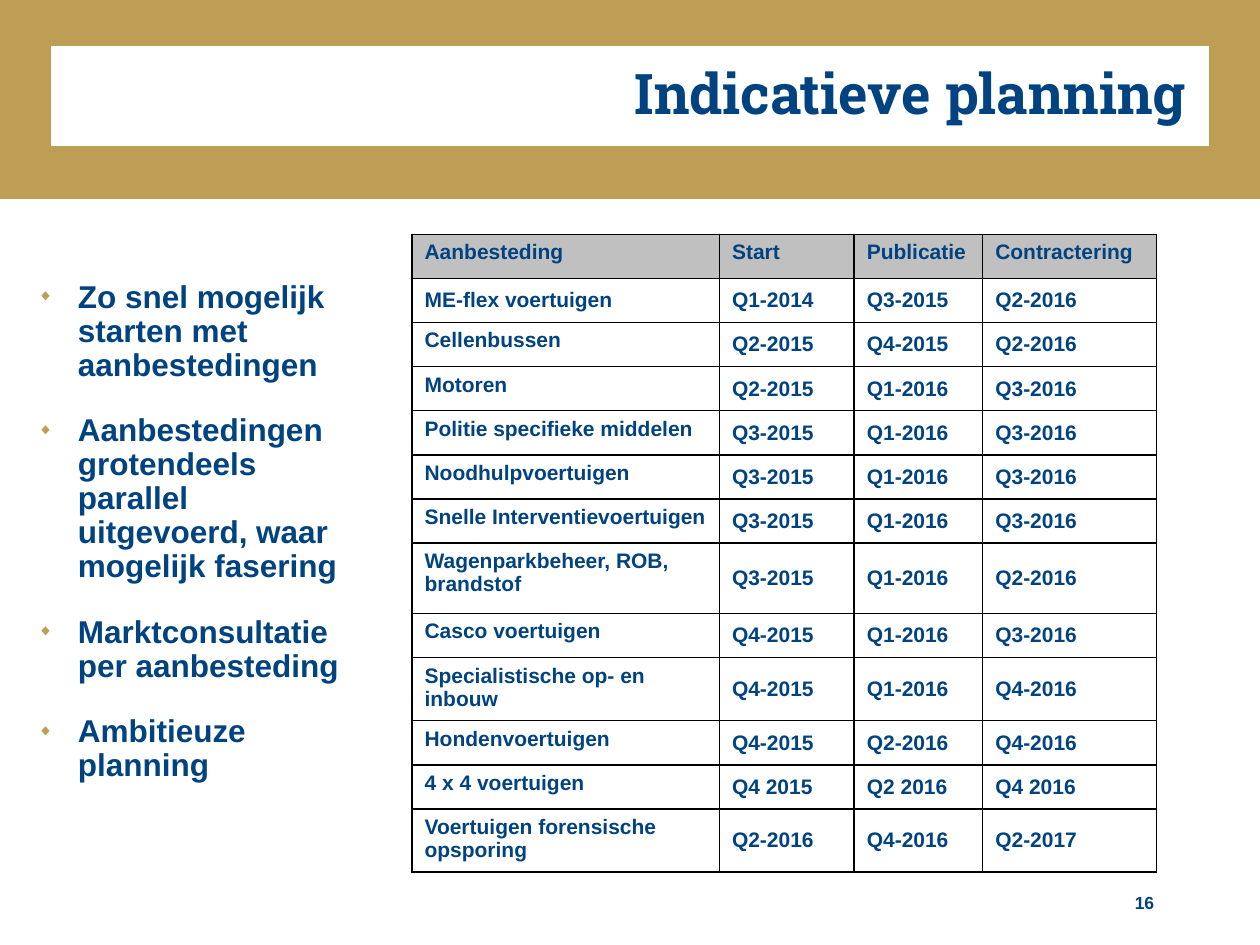
from dataclasses import dataclass

from lxml import etree
from pptx import Presentation
from pptx.dml.color import RGBColor
from pptx.enum.text import MSO_ANCHOR, MSO_AUTO_SIZE, PP_ALIGN
from pptx.oxml.ns import qn
from pptx.util import Inches, Pt

LEFT, RIGHT, JUSTIFY = PP_ALIGN.LEFT, PP_ALIGN.RIGHT, PP_ALIGN.JUSTIFY
TOP, MIDDLE = MSO_ANCHOR.TOP, MSO_ANCHOR.MIDDLE
NO_AUTOFIT = MSO_AUTO_SIZE.NONE


@dataclass(frozen=True)
class Theme:
    """Colours, fonts and type sizes of the slide."""
    navy: str = "004380"
    gold: str = "BE9E55"
    white: str = "FFFFFF"
    grey: str = "C0C0C0"
    black: str = "000000"
    heading_font: str = "Roboto Slab"
    body_font: str = "Arial"
    title_size: int = 32
    body_size: int = 18
    table_size: int = 12
    number_size: int = 10


THEME = Theme()

TITLE = "Indicatieve planning"
PAGE_NUMBER = "16"
POINTS = [
    "Zo snel mogelijk starten met aanbestedingen",
    "Aanbestedingen grotendeels parallel uitgevoerd, waar mogelijk fasering",
    "Marktconsultatie per aanbesteding",
    "Ambitieuze planning",
]
PLANNING = [
    ("Aanbesteding", "Start", "Publicatie", "Contractering"),
    ("ME-flex voertuigen", "Q1-2014", "Q3-2015", "Q2-2016"),
    ("Cellenbussen", "Q2-2015", "Q4-2015", "Q2-2016"),
    ("Motoren", "Q2-2015", "Q1-2016", "Q3-2016"),
    ("Politie specifieke middelen", "Q3-2015", "Q1-2016", "Q3-2016"),
    ("Noodhulpvoertuigen", "Q3-2015", "Q1-2016", "Q3-2016"),
    ("Snelle Interventievoertuigen", "Q3-2015", "Q1-2016", "Q3-2016"),
    ("Wagenparkbeheer, ROB, brandstof", "Q3-2015", "Q1-2016", "Q2-2016"),
    ("Casco voertuigen", "Q4-2015", "Q1-2016", "Q3-2016"),
    ("Specialistische op- en inbouw", "Q4-2015", "Q1-2016", "Q4-2016"),
    ("Hondenvoertuigen", "Q4-2015", "Q2-2016", "Q4-2016"),
    ("4 x 4 voertuigen", "Q4 2015", "Q2 2016", "Q4 2016"),
    ("Voertuigen forensische opsporing", "Q2-2016", "Q4-2016", "Q2-2017"),
]
COLUMN_WIDTHS = (2.44, 1.07, 1.02, 1.38)
COLUMN_ALIGNMENTS = (LEFT, JUSTIFY, LEFT, JUSTIFY)
ROW_HEIGHT = 0.35
TALL_ROW, TALL_ROW_HEIGHT = 7, 0.56


def rgb(colour):
    """Turn a hex string into a colour."""
    return RGBColor.from_string(colour)


def write_text(frame, *texts, size, font=THEME.body_font, align=LEFT,
               line_spacing=None, space_before=None):
    """Write one bold navy paragraph per text and return the paragraphs."""
    frame.word_wrap = True
    paragraphs = [frame.paragraphs[0]] + [frame.add_paragraph() for _ in texts[1:]]
    for paragraph, text in zip(paragraphs, texts):
        paragraph.alignment = align
        paragraph.line_spacing = line_spacing
        paragraph.space_before = space_before
        run = paragraph.add_run()
        run.text = text
        run.font.name = font
        run.font.size = Pt(size)
        run.font.bold = True
        run.font.color.rgb = rgb(THEME.navy)
    return paragraphs


def set_insets(frame, horizontal, vertical):
    """Set equal side insets and equal top and bottom insets."""
    frame.margin_left = frame.margin_right = Inches(horizontal)
    frame.margin_top = frame.margin_bottom = Inches(vertical)


def add_bullet(paragraph):
    """Give a paragraph a hanging half-size gold diamond."""
    properties = paragraph._p.get_or_add_pPr()
    indent = Inches(0.32)
    properties.set("marL", str(indent))
    properties.set("indent", str(-indent))
    colour = etree.SubElement(properties, qn("a:buClr"))
    etree.SubElement(colour, qn("a:srgbClr"), val=THEME.gold)
    etree.SubElement(properties, qn("a:buSzPct"), val="50000")
    etree.SubElement(properties, qn("a:buFont"), typeface=THEME.body_font)
    etree.SubElement(properties, qn("a:buChar"), char="◆")


def add_borders(cell):
    """Draw a thin black line on each side of a cell."""
    properties = cell._tc.get_or_add_tcPr()
    for side in ("a:lnL", "a:lnR", "a:lnT", "a:lnB"):
        border = etree.SubElement(properties, qn(side), w=str(Pt(1)))
        fill = etree.SubElement(border, qn("a:solidFill"))
        etree.SubElement(fill, qn("a:srgbClr"), val=THEME.black)


def format_title(title):
    """Place the title in a white panel with a broad gold frame."""
    title.left, title.top = Inches(0.2), Inches(0.16)
    title.width, title.height = Inches(9.6), Inches(1.21)
    title.fill.solid()
    title.fill.fore_color.rgb = rgb(THEME.white)
    title.line.color.rgb = rgb(THEME.gold)
    title.line.width = Pt(30)
    etree.SubElement(title.line._get_or_add_ln(), qn("a:miter"), lim="800000")
    frame = title.text_frame
    frame.auto_size = NO_AUTOFIT
    frame.vertical_anchor = MIDDLE
    set_insets(frame, 0.39, 0.16)
    write_text(frame, TITLE, size=THEME.title_size, font=THEME.heading_font,
               align=RIGHT, line_spacing=0.9)


def add_page_number(slide):
    """Add the page number at the bottom right."""
    number = slide.shapes.add_textbox(
        Inches(8.18), Inches(7.08), Inches(0.98), Inches(0.39))
    set_insets(number.text_frame, 0, 0)
    write_text(number.text_frame, PAGE_NUMBER, size=THEME.number_size, align=RIGHT)


def add_points(slide):
    """Add the bulleted key points on the left."""
    points = slide.shapes.add_textbox(
        Inches(0.2), Inches(2.18), Inches(2.68), Inches(4.49))
    for paragraph in write_text(points.text_frame, *POINTS, size=THEME.body_size,
                                line_spacing=0.9, space_before=Pt(18)):
        add_bullet(paragraph)


def add_planning(slide):
    """Add the planning table on the right."""
    heights = [TALL_ROW_HEIGHT if row == TALL_ROW else ROW_HEIGHT
               for row in range(len(PLANNING))]
    planning = slide.shapes.add_table(
        len(PLANNING), len(COLUMN_WIDTHS), Inches(3.27), Inches(1.86),
        Inches(sum(COLUMN_WIDTHS)), Inches(sum(heights))).table
    planning.first_row = planning.horz_banding = False
    for column, width in zip(planning.columns, COLUMN_WIDTHS):
        column.width = Inches(width)
    for row, (height, texts) in enumerate(zip(heights, PLANNING)):
        planning.rows[row].height = Inches(height)
        for column, text in enumerate(texts):
            cell = planning.cell(row, column)
            is_header = row == 0
            is_centred = row == 1 or (column > 0 and not is_header)
            add_borders(cell)
            cell.fill.solid()
            cell.fill.fore_color.rgb = rgb(THEME.grey if is_header else THEME.white)
            cell.vertical_anchor = MIDDLE if is_centred else TOP
            write_text(cell.text_frame, text, size=THEME.table_size,
                       align=LEFT if is_header else COLUMN_ALIGNMENTS[column])


def main():
    """Build and save the slide."""
    presentation = Presentation()
    presentation.slide_width, presentation.slide_height = Inches(10), Inches(7.5)
    slide = presentation.slides.add_slide(presentation.slide_layouts[5])
    format_title(slide.shapes.title)
    add_page_number(slide)
    add_points(slide)
    add_planning(slide)
    presentation.save("out.pptx")


if __name__ == "__main__":
    main()
